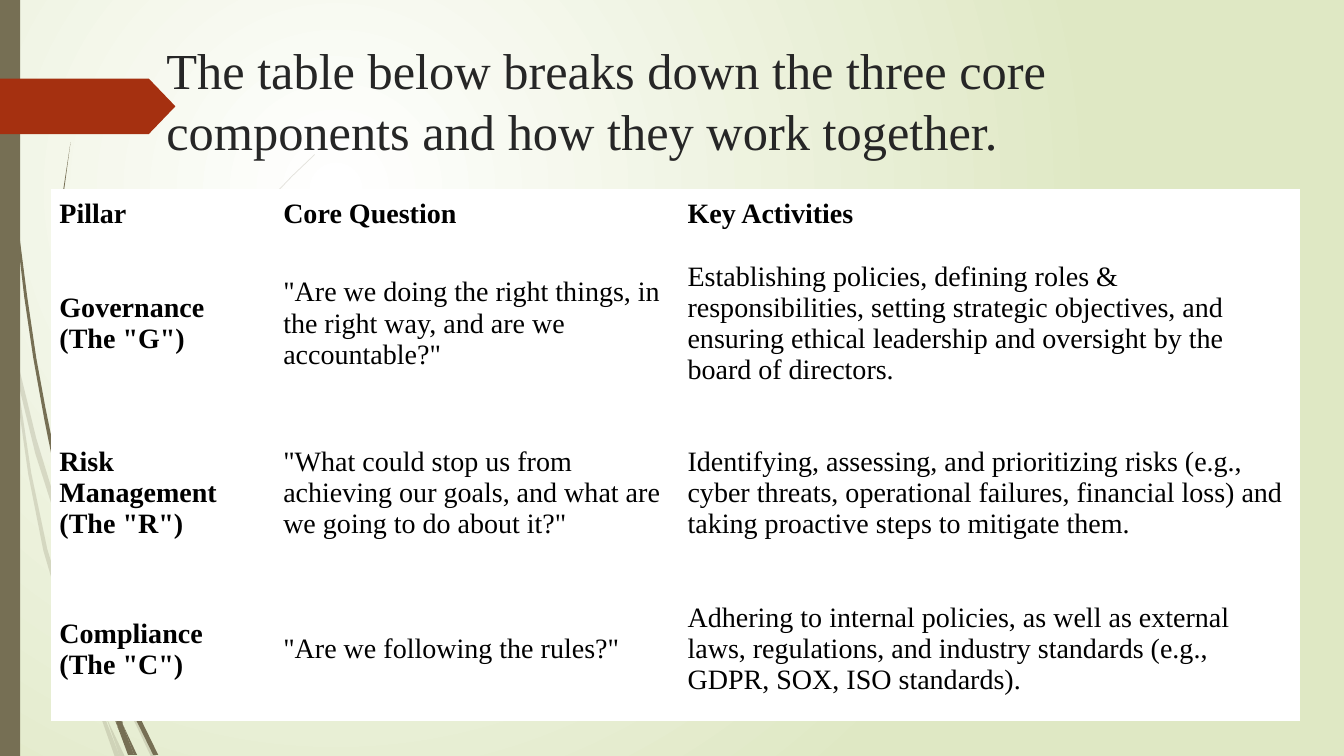
from lxml import etree
from pptx import Presentation
from pptx import oxml
from pptx import util as u
from pptx.dml.color import RGBColor
from pptx.enum import shapes, text
from pptx.oxml import ns

WHITE = RGBColor(0xFF, 0xFF, 0xFF)
BLACK = RGBColor(0, 0, 0)
SAGE = RGBColor(0xDF, 0xE8, 0xC4)
OLIVE = RGBColor(0x76, 0x6F, 0x54)
RUST = RGBColor(0xA5, 0x30, 0x10)
INK = RGBColor(0x26, 0x26, 0x26)
FACE = "Times New Roman"

# The layout grid counts in hundredths of an inch.
GRID = u.Inches(0.01)
WIDE, HIGH = 1333, 750

deck = Presentation()
deck.slide_width, deck.slide_height = WIDE * GRID, HIGH * GRID
slide = deck.slides.add_slide(deck.slide_layouts[5])


def paint(shape, color, alpha=100):
    shape.shadow.inherit = False
    shape.fill.solid()
    shape.fill.fore_color.rgb = color
    shape.line.fill.background()
    if alpha < 100:
        tint = shape.element.spPr.find(".//" + ns.qn("a:srgbClr"))
        etree.SubElement(tint, ns.qn("a:alpha"), val=str(alpha * 1000))


def style(font, **extra):
    for key, value in {"name": FACE, **extra}.items():
        if key == "color":
            font.color.rgb = value
        else:
            setattr(font, key, value)


# Background: a circular glow centred a quarter of the way in
back = slide.background.fill
back.gradient()
for stop, color in zip(back.gradient_stops, (WHITE, SAGE)):
    stop.color.rgb = color
glow = slide.element.find(".//" + ns.qn("a:gradFill"))
glow.remove(glow.find(ns.qn("a:lin")))
glow.append(oxml.parse_xml(
    f'<a:path {ns.nsdecls("a")} path="circle">'
    '<a:fillToRect l="50000" t="50000" r="100000" b="100000"/></a:path>'))

# Grass blades: each outline runs down one edge and back up the other
PALE = [
    [(0, 282), (9, 322), (11, 350), (10, 344), (0, 299)],
    [(14, 345), (36, 435), (62, 520), (85, 586), (84, 599), (58, 522),
     (35, 450), (17, 376)],
    [(88, 596), (92, 607), (127, 692), (155, 751), (150, 751), (123, 694),
     (88, 610)],
    [(105, 711), (124, 751), (119, 751)],
    [(11, 350), (17, 376), (31, 469), (47, 545), (70, 619), (93, 683),
     (101, 714), (92, 693), (65, 621), (43, 546), (28, 470), (18, 400)],
    [(84, 599), (88, 610), (91, 646), (105, 711), (93, 683), (87, 646)],
    [(312, 153), (289, 175), (268, 197), (228, 244), (190, 295), (158, 348),
     (128, 403), (107, 461), (91, 521), (85, 586), (88, 596), (94, 523),
     (110, 462), (131, 404), (160, 349), (192, 296), (229, 245), (268, 198),
     (290, 175), (312, 154)],
    [(93, 683), (119, 751), (114, 751), (101, 714)],
    [(85, 586), (88, 596), (88, 610), (84, 599)],
]
DARK = [
    [(3, 0), (4, 48), (7, 110), (11, 172), (17, 233), (24, 294), (33, 355),
     (44, 416), (57, 481), (55, 453), (45, 404), (36, 355), (27, 294),
     (19, 232), (12, 171), (8, 109), (5, 48), (4, 0)],
    [(60, 472), (75, 533), (106, 631), (106, 645), (88, 592), (64, 505)],
    [(110, 641), (136, 706), (157, 749), (152, 749), (132, 708), (111, 656)],
    [(57, 477), (64, 505), (72, 556), (84, 608), (98, 657), (110, 691),
     (117, 722), (93, 659), (79, 608), (68, 557)],
    [(70, 141), (62, 193), (56, 245), (53, 297), (52, 349), (52, 399),
     (55, 449), (60, 472), (56, 415), (54, 349), (55, 297), (58, 245),
     (63, 193)],
    [(122, 719), (136, 749), (133, 749)],
    [(55, 449), (60, 472), (64, 505), (57, 477)],
    [(260, 344), (231, 373), (204, 405), (156, 474), (122, 551), (106, 631),
     (110, 641), (125, 552), (158, 476), (205, 406), (231, 374), (261, 344)],
    [(117, 722), (131, 749), (127, 749)],
    [(106, 645), (111, 656), (122, 719), (110, 691)],
    [(106, 631), (110, 641), (111, 656), (106, 645)],
    [(110, 691), (122, 719), (133, 749), (130, 749), (117, 722)],
]
for blades, alpha in ((PALE, 20), (DARK, 100)):
    for first, *rest in blades:
        edge = slide.shapes.build_freeform(*first, scale=GRID)
        edge.add_line_segments(rest, close=True)
        paint(edge.convert_to_shape(), OLIVE, alpha)

# Side bar and pointer
bar = slide.shapes.add_shape(
    shapes.MSO_SHAPE.RECTANGLE, 0, 0, 20 * GRID, HIGH * GRID)
paint(bar, OLIVE)
flag = slide.shapes.add_shape(
    shapes.MSO_SHAPE.PENTAGON, 0, 78 * GRID, 174 * GRID, 55 * GRID)
flag.adjustments[0] = 0.48
paint(flag, RUST)

# Title, brought in front of the pointer
title = slide.shapes.title
slide.shapes.element.append(title.element)
title.left, title.top, title.width, title.height = (
    n * GRID for n in (155, 34, 1143, 133))
frame = title.text_frame
frame.text = ("The table below breaks down the three core components "
              "and how they work together.")
frame.word_wrap = True
frame.auto_size = text.MSO_AUTO_SIZE.NONE
frame.vertical_anchor = text.MSO_ANCHOR.TOP
frame.paragraphs[0].alignment = text.PP_ALIGN.LEFT
style(frame.paragraphs[0].font, size=u.Pt(36), color=INK)

# Table of pillars
ROWS = [
    ("Pillar", "Core Question", "Key Activities"),
    ('Governance (The "G")',
     '"Are we doing the right things, in the right way, '
     'and are we accountable?"',
     "Establishing policies, defining roles & responsibilities, setting "
     "strategic objectives, and ensuring ethical leadership and oversight "
     "by the board of directors."),
    ('Risk Management (The "R")',
     '"What could stop us from achieving our goals, '
     'and what are we going to do about it?"',
     "Identifying, assessing, and prioritizing risks (e.g., cyber threats, "
     "operational failures, financial loss) and taking proactive steps to "
     "mitigate them."),
    ('Compliance (The "C")',
     '"Are we following the rules?"',
     "Adhering to internal policies, as well as external laws, regulations, "
     "and industry standards (e.g., GDPR, SOX, ISO standards)."),
]
COLS, TALL = (221, 401, 616), (49, 168, 168, 142)
table = slide.shapes.add_table(
    len(TALL), len(COLS), 51 * GRID, 188 * GRID,
    sum(COLS) * GRID, sum(TALL) * GRID).table
table.first_row = table.horz_banding = False
for col, width in zip(table.columns, COLS):
    col.width = width * GRID
for r, (row, height, words) in enumerate(zip(table.rows, TALL, ROWS)):
    row.height = height * GRID
    for c, (cell, word) in enumerate(zip(row.cells, words)):
        cell.text = word
        cell.fill.solid()
        cell.fill.fore_color.rgb = WHITE
        cell.vertical_anchor = text.MSO_ANCHOR.MIDDLE
        cell.margin_left = (9 if c else 8) * GRID
        cell.margin_right = (8 if r and c == 2 else 9) * GRID
        cell.margin_top = cell.margin_bottom = 6 * GRID
        style(cell.text_frame.paragraphs[0].font, size=u.Pt(20),
              color=BLACK, bold=r == 0 or c == 0)

deck.save("out.pptx")
